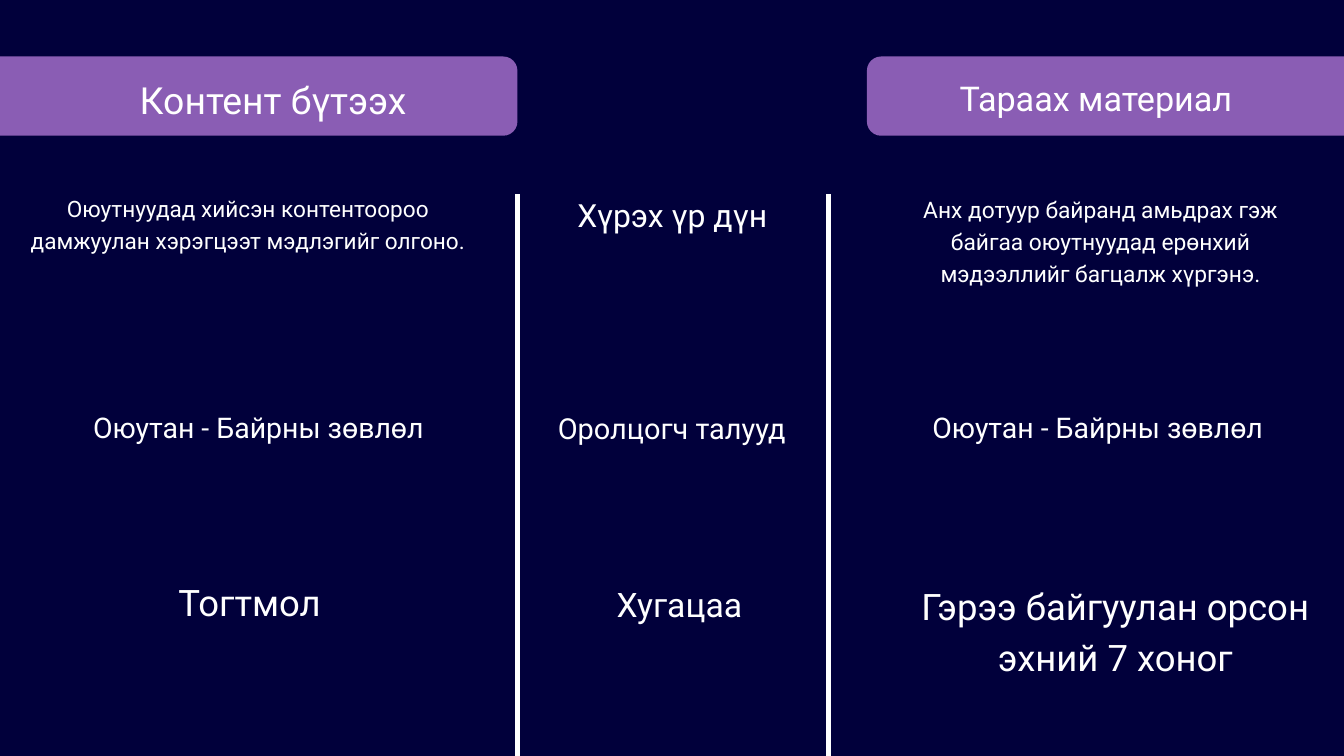
from lxml import etree
from pptx import Presentation
from pptx.dml.color import RGBColor
from pptx.enum.shapes import MSO_CONNECTOR, MSO_SHAPE
from pptx.enum.text import MSO_ANCHOR, MSO_AUTO_SIZE, PP_ALIGN
from pptx.oxml.ns import qn
from pptx.util import Inches, Pt

NAVY, PURPLE, WHITE = "01003B", "8A5DB4", "FFFFFF"
FONT = "Roboto"
LEADING = 1.4  # line pitch as a multiple of the font size

BAR_TOP, BAR_WIDTH, BAR_HEIGHT = 0.84, 8.41, 1.18
BAR_RADIUS = 0.18
DIVIDERS = (7.7, 12.33)
DIVIDER_TOP, DIVIDER_BOTTOM = 2.88, 14.13

BARS = (-0.71, 12.9)

# placeholder index, text, size, (left, top, width, height)
HEADINGS = [
    (1, "Контент бүтээх", 40, (1.8, 1.03, 4.53, 0.76)),
    (3, "Тараах материал", 36.6, (13.95, 1.05, 4.72, 0.68)),
]

# one line per comparison row: left side, criterion, right side
ROWS = [
    [("Оюутнуудад хийсэн контентоороо дамжуулан хэрэгцээт мэдлэгийг олгоно.",
      24.2, (0.42, 2.84, 6.54, 1.38)),
     ("Хүрэх үр дүн", 34.2, (8.45, 2.82, 3.11, 0.63)),
     ("Анх дотуур байранд амьдрах гэж байгаа оюутнуудад ерөнхий "
      "мэдээллийг багцалж хүргэнэ.", 24.4, (13.3, 2.84, 6.15, 1.38))],
    [("Оюутан - Байрны зөвлөл", 30.5, (1.1, 6.02, 5.49, 0.57)),
     ("Оролцогч талууд", 31, (7.7, 6.02, 4.59, 0.58)),
     ("Оюутан - Байрны зөвлөл", 30.5, (13.59, 6.02, 5.49, 0.57))],
    [("Тогтмол", 39.1, (2.54, 8.53, 2.35, 0.73)),
     ("Хугацаа", 36.1, (8.45, 8.59, 3.32, 0.68)),
     ("Гэрээ байгуулан орсон эхний 7 хоног", 39.1, (13.2, 8.58, 6.8, 1.49))],
]


def paint(color_format, color):
    color_format.rgb = RGBColor.from_string(color)


def add_bar(s, left):
    bar = s.shapes.add_shape(
        MSO_SHAPE.ROUNDED_RECTANGLE, Inches(left), Inches(BAR_TOP),
        Inches(BAR_WIDTH), Inches(BAR_HEIGHT))
    bar.adjustments[0] = BAR_RADIUS
    bar.shadow.inherit = False
    bar.fill.solid()
    paint(bar.fill.fore_color, PURPLE)
    bar.line.fill.background()


def add_divider(s, x):
    line = s.shapes.add_connector(
        MSO_CONNECTOR.STRAIGHT, Inches(x), Inches(DIVIDER_BOTTOM),
        Inches(x), Inches(DIVIDER_TOP))
    paint(line.line.color, WHITE)
    line.line.width = Pt(5.25)
    etree.SubElement(line._element.spPr, qn("a:effectLst"))


def write(sp, text, size):
    tf = sp.text_frame
    tf.word_wrap = True
    tf.auto_size = MSO_AUTO_SIZE.NONE
    tf.vertical_anchor = MSO_ANCHOR.TOP
    tf.margin_left = tf.margin_top = tf.margin_right = tf.margin_bottom = 0
    tf.text = text
    p = tf.paragraphs[0]
    p.alignment = PP_ALIGN.CENTER
    p.line_spacing = Pt(round(size * LEADING, 1))
    p.space_before = Pt(0)
    p.font.name = FONT
    p.font.size = Pt(size)
    p.font.bold = False
    paint(p.font.color, WHITE)


def add_heading(s, idx, text, size, box):
    """Fill a layout heading and bring it in front of its bar."""
    sp = next(ph for ph in s.placeholders if ph.placeholder_format.idx == idx)
    sp.left, sp.top, sp.width, sp.height = map(Inches, box)
    write(sp, text, size)
    s.shapes._spTree.append(sp._element)


def add_label(s, text, size, box):
    write(s.shapes.add_textbox(*map(Inches, box)), text, size)


def remove_empty_placeholders(s):
    for ph in list(s.placeholders):
        if not ph.text_frame.text:
            ph._element.getparent().remove(ph._element)


def main():
    prs = Presentation()
    prs.slide_width, prs.slide_height = Inches(20), Inches(11.25)
    s = prs.slides.add_slide(prs.slide_layouts.get_by_name("Comparison"))
    s.background.fill.solid()
    paint(s.background.fill.fore_color, NAVY)

    for x in DIVIDERS:
        add_divider(s, x)
    for left in BARS:
        add_bar(s, left)
    for heading in HEADINGS:
        add_heading(s, *heading)
    for row in ROWS:
        for label in row:
            add_label(s, *label)
    remove_empty_placeholders(s)
    prs.save("out.pptx")


if __name__ == "__main__":
    main()
